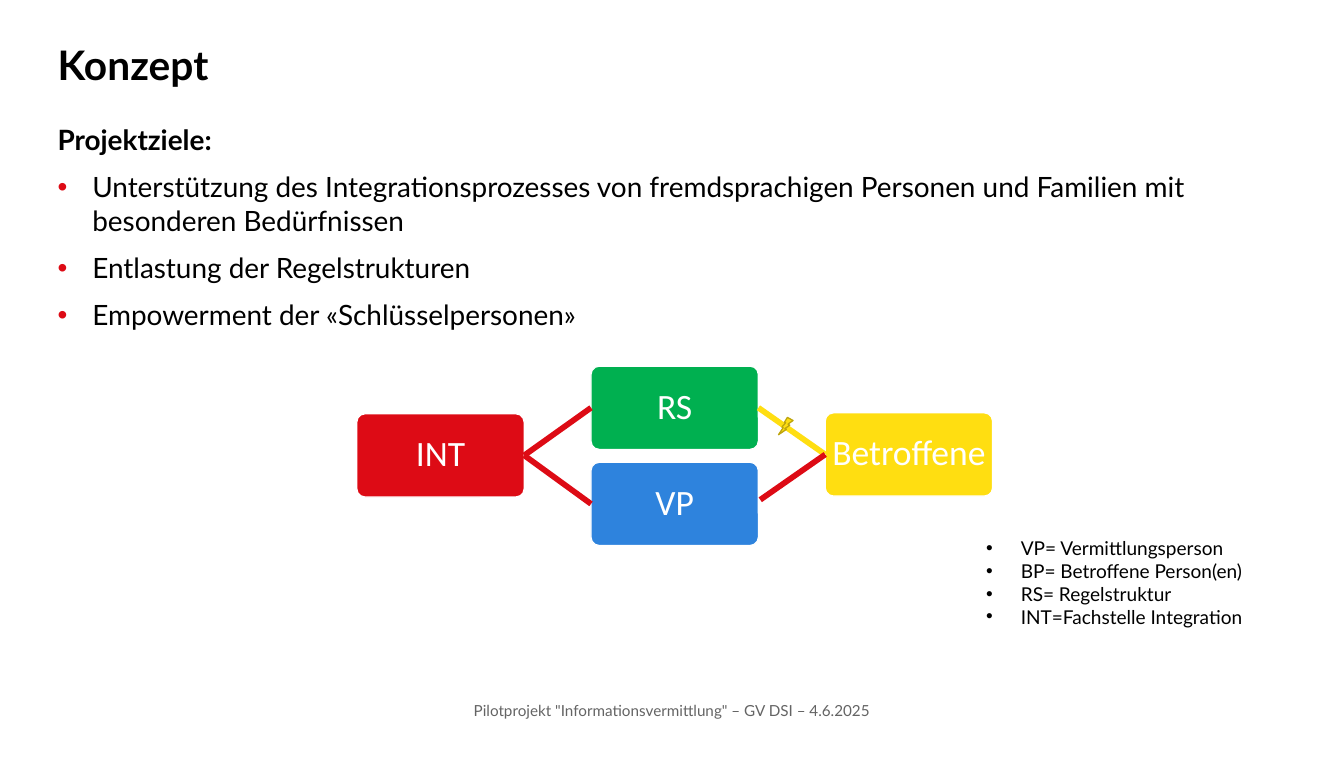
from lxml.etree import SubElement
from pptx import Presentation
from pptx.dml.color import RGBColor
from pptx.enum.shapes import MSO_CONNECTOR as Connector, MSO_SHAPE as Shape
from pptx.enum.text import MSO_ANCHOR as Anchor, PP_ALIGN as Align
from pptx.oxml.ns import qn
from pptx.util import Inches, Pt

COLORS = {"red": "DD0B15", "green": "00B050", "yellow": "FFDE11", "blue": "2E83DD",
          "gold": "BDA40D", "white": "FFFFFF", "black": "000000", "grey": "646464"}
TITLE = "Konzept"
HEADING = "Projektziele:"
GOALS = [
    "Unterstützung des Integrationsprozesses von fremdsprachigen Personen und Familien mit besonderen Bedürfnissen",
    "Entlastung der Regelstrukturen",
    "Empowerment der «Schlüsselpersonen»",
]
LEGEND = ["VP= Vermittlungsperson", "BP= Betroffene Person(en)",
          "RS= Regelstruktur", "INT=Fachstelle Integration"]
FOOTER = 'Pilotprojekt "Informationsvermittlung" – GV DSI – 4.6.2025'
NODES = {"INT": (0, 4.52, "red"), "RS": (1, 4.0, "green"),
         "Betroffene": (2, 4.51, "yellow"), "VP": (1, 5.05, "blue")}
LINKS = [("INT", "RS", "red"), ("RS", "Betroffene", "yellow"), ("INT", "VP", "red")]
HELP_START = (8.31, 5.46)
NODE_LEFT, NODE_STEP, NODE_WIDTH, NODE_HEIGHT = 3.9, 2.56, 1.83, 0.91
BULLET_INDENT = 0.38


def color(name):
    return RGBColor.from_string(COLORS[name])


def add_text_box(page, area, inset=None):
    frame = page.shapes.add_textbox(*map(Inches, area)).text_frame
    frame.word_wrap = True
    if inset is not None:
        set_insets(frame, inset)
    return frame


def set_insets(frame, inset):
    frame.margin_left = frame.margin_right = Inches(inset)
    frame.margin_top = frame.margin_bottom = Inches(inset)


def next_paragraph(frame, number):
    return frame.add_paragraph() if number else frame.paragraphs[0]


def add_run(para, text, size, tint="black", font="Lato", bold=False):
    span = para.add_run()
    span.text = text
    span.font.size, span.font.name, span.font.bold = Pt(size), font, bold
    span.font.color.rgb = color(tint)


def add_bullet(para, tint):
    props = para._p.get_or_add_pPr()
    props.set("marL", str(Inches(BULLET_INDENT)))
    props.set("indent", str(-Inches(BULLET_INDENT)))
    SubElement(SubElement(props, qn("a:buClr")), qn("a:srgbClr"), val=COLORS[tint])
    SubElement(props, qn("a:buFont"), typeface="Arial")
    SubElement(props, qn("a:buChar"), char="•")


def add_shape(page, kind, area, fill, outline):
    shape = page.shapes.add_shape(kind, *map(Inches, area))
    shape.shadow.inherit = False
    shape.fill.solid()
    shape.fill.fore_color.rgb = color(fill)
    shape.line.color.rgb = color(outline)
    shape.line.width = Pt(1)
    return shape


def add_node(page, label, column, top, fill):
    area = (NODE_LEFT + column * NODE_STEP, top, NODE_WIDTH, NODE_HEIGHT)
    box = add_shape(page, Shape.ROUNDED_RECTANGLE, area, fill, "white")
    box.adjustments[0] = 0.1
    frame = box.text_frame
    set_insets(frame, 0.04)
    frame.vertical_anchor = Anchor.MIDDLE
    para = frame.paragraphs[0]
    para.alignment, para.line_spacing = Align.CENTER, 0.9
    add_run(para, label, 28, "white", "Calibri")
    return box


def add_link(page, start, target, tint):
    line = page.shapes.add_connector(Connector.STRAIGHT, *map(Inches, start + start))
    line.end_connect(target, 1)
    line.line.color.rgb = color(tint)
    line.line.width = Pt(4.5)
    SubElement(line.element.spPr, qn("a:effectLst"))
    return line


def add_texts(page):
    para = add_text_box(page, (0.63, 0.41, 6.35, 0.47), 0).paragraphs[0]
    para.line_spacing = Pt(40)
    add_run(para, TITLE, 32, bold=True)

    frame = add_text_box(page, (0.63, 1.33, 12.67, 2.63), 0)
    for number, text in enumerate([HEADING] + GOALS):
        para = next_paragraph(frame, number)
        para.line_spacing = Pt(27)
        if number:
            para.space_before = Pt(10)
            add_bullet(para, "red")
        add_run(para, text, 22, bold=number == 0)

    frame = add_text_box(page, (10.68, 5.81, 3.33, 1.11))
    for number, text in enumerate(LEGEND):
        para = next_paragraph(frame, number)
        add_bullet(para, "black")
        add_run(para, text, 15)

    frame = add_text_box(page, (2.62, 7.54, 9.45, 0.44))
    frame.vertical_anchor = Anchor.MIDDLE
    frame.paragraphs[0].alignment = Align.CENTER
    add_run(frame.paragraphs[0], FOOTER, 12, "grey")


def add_diagram(page):
    boxes = {label: add_node(page, label, *node) for label, node in NODES.items()}
    for source, target, tint in LINKS:
        line = add_link(page, (0, 0), boxes[target], tint)
        line.begin_connect(boxes[source], 3)
    add_link(page, HELP_START, boxes["Betroffene"], "red")
    bolt = add_shape(page, Shape.LIGHTNING_BOLT, (8.51, 4.56, 0.16, 0.19), "yellow", "gold")
    bolt.element.spPr.find(qn("a:xfrm")).set("flipH", "1")


def main():
    """Build the concept slide with project goals and the support diagram."""
    deck = Presentation()
    deck.slide_width, deck.slide_height = Inches(14.69), Inches(8.27)
    page = deck.slides.add_slide(deck.slide_layouts[6])
    add_texts(page)
    add_diagram(page)
    deck.save("out.pptx")


if __name__ == "__main__":
    main()
